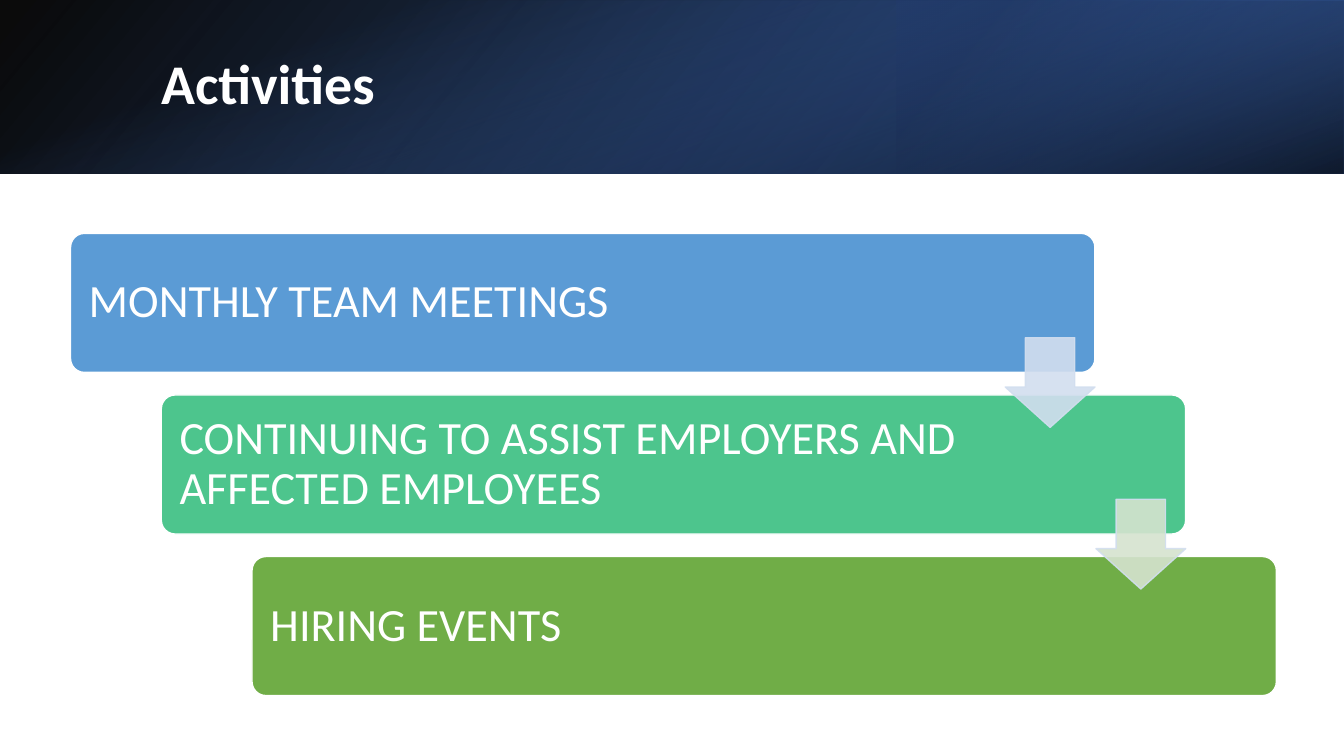
from dataclasses import dataclass
from lxml.etree import SubElement
from pptx import Presentation
from pptx.dml.color import RGBColor
from pptx.enum.shapes import MSO_SHAPE
from pptx.enum.text import MSO_ANCHOR
from pptx.oxml.ns import qn
from pptx.util import Inches, Pt


@dataclass
class Theme:
    font: str = "Calibri"
    white: str = "FFFFFF"
    black: str = "000000"
    navy: str = "203864"
    deep: str = "2F5597"
    blue: str = "4472C4"
    steps: tuple = ("5B9BD5", "4DC58D", "70AD47")
    arrows: tuple = ("D2DEEF", "D5E3CF")
    edge: str = "D2DEEF"
    head: int = 40
    body: int = 33


theme = Theme()
deck = Presentation()
deck.slide_width, deck.slide_height = Inches(13.33), Inches(7.5)
slide = deck.slides.add_slide(deck.slide_layouts[6])


def add_text(text, box, size, bold=False, inset=0.1):
    shape = slide.shapes.add_textbox(*map(Inches, box))
    frame = shape.text_frame
    frame.word_wrap = True
    frame.vertical_anchor = MSO_ANCHOR.MIDDLE
    frame.margin_left = frame.margin_right = Inches(inset)
    frame.margin_top = frame.margin_bottom = Inches(inset)
    para = frame.paragraphs[0]
    para.line_spacing = 0.9
    run = para.add_run()
    run.text = text
    run.font.name, run.font.size, run.font.bold = theme.font, Pt(size), bold
    run.font.color.rgb = RGBColor.from_string(theme.white)


def add_block(kind, box, fill=None, edge=None, alpha=None):
    shape = slide.shapes.add_shape(kind, *map(Inches, box))
    shape.shadow.inherit = False
    if fill is None:
        shape.line.fill.background()
        return shape
    shape.fill.solid()
    shape.fill.fore_color.rgb = RGBColor.from_string(fill)
    shape.line.color.rgb = RGBColor.from_string(edge)
    shape.line.width = Pt(1)
    if alpha:
        for color in shape.element.spPr.iter(qn("a:srgbClr")):
            SubElement(color, qn("a:alpha"), val=str(alpha * 1000))
    return shape


# Header band: three layered gradients with (position, colour, opacity) stops
band = 1.72
layers = [
    ((0, 0, 13.33, band), 0, True, 140,
     [(0, theme.black, 96), (100, theme.deep, 100)]),
    ((8.89, 0, 4.44, band), 180, True, 320,
     [(19, theme.navy, 68), (100, theme.blue, 79)]),
    ((5.8, -5.8, band, 13.33), 90, False, 340,
     [(23, theme.blue, 0), (99, theme.black, 74)]),
]
for box, turn, flip, angle, stops in layers:
    layer = add_block(MSO_SHAPE.RECTANGLE, box)
    layer.rotation = turn
    props = layer.element.spPr
    if flip:
        props.find(qn("a:xfrm")).set("flipH", "1")
    layer.fill.gradient()
    grad = props.find(qn("a:gradFill"))
    for child in list(grad):
        grad.remove(child)
    grad.set("rotWithShape", "1")
    items = SubElement(grad, qn("a:gsLst"))
    for pos, color, alpha in stops:
        stop = SubElement(items, qn("a:gs"), pos=str(pos * 1000))
        tint = SubElement(stop, qn("a:srgbClr"), val=color)
        SubElement(tint, qn("a:alpha"), val=str(alpha * 1000))
    SubElement(grad, qn("a:lin"), ang=str(angle * 60000), scaled="0")

# Title
add_text("Activities", (1.5, 0.38, 10.98, 0.96), theme.head, bold=True)

# Staircase of steps
left, top, right, down = 0.7, 2.315, 0.9, 1.603
steps = [
    ("MONTHLY TEAM MEETINGS", 8.67),
    ("CONTINUING TO ASSIST EMPLOYERS AND AFFECTED EMPLOYEES", 8.29),
    ("HIRING EVENTS", 8.29),
]
for i, (label, width) in enumerate(steps):
    x, y = left + i * right, top + i * down
    step = add_block(MSO_SHAPE.ROUNDED_RECTANGLE, (x, y, 10.16, 1.38),
                     theme.steps[i], theme.white)
    step.adjustments[0] = 0.1
    add_text(label, (x + 0.04, y + 0.04, width, 1.3), theme.body, inset=0.14)

# Arrows between steps
for i, color in enumerate(theme.arrows):
    arrow = add_block(MSO_SHAPE.DOWN_ARROW,
                      (9.97 + i * right, 3.35 + i * down, 0.89, 0.89),
                      color, theme.edge, alpha=90)
    arrow.adjustments[0], arrow.adjustments[1] = 0.55, 0.45

deck.save("out.pptx")
